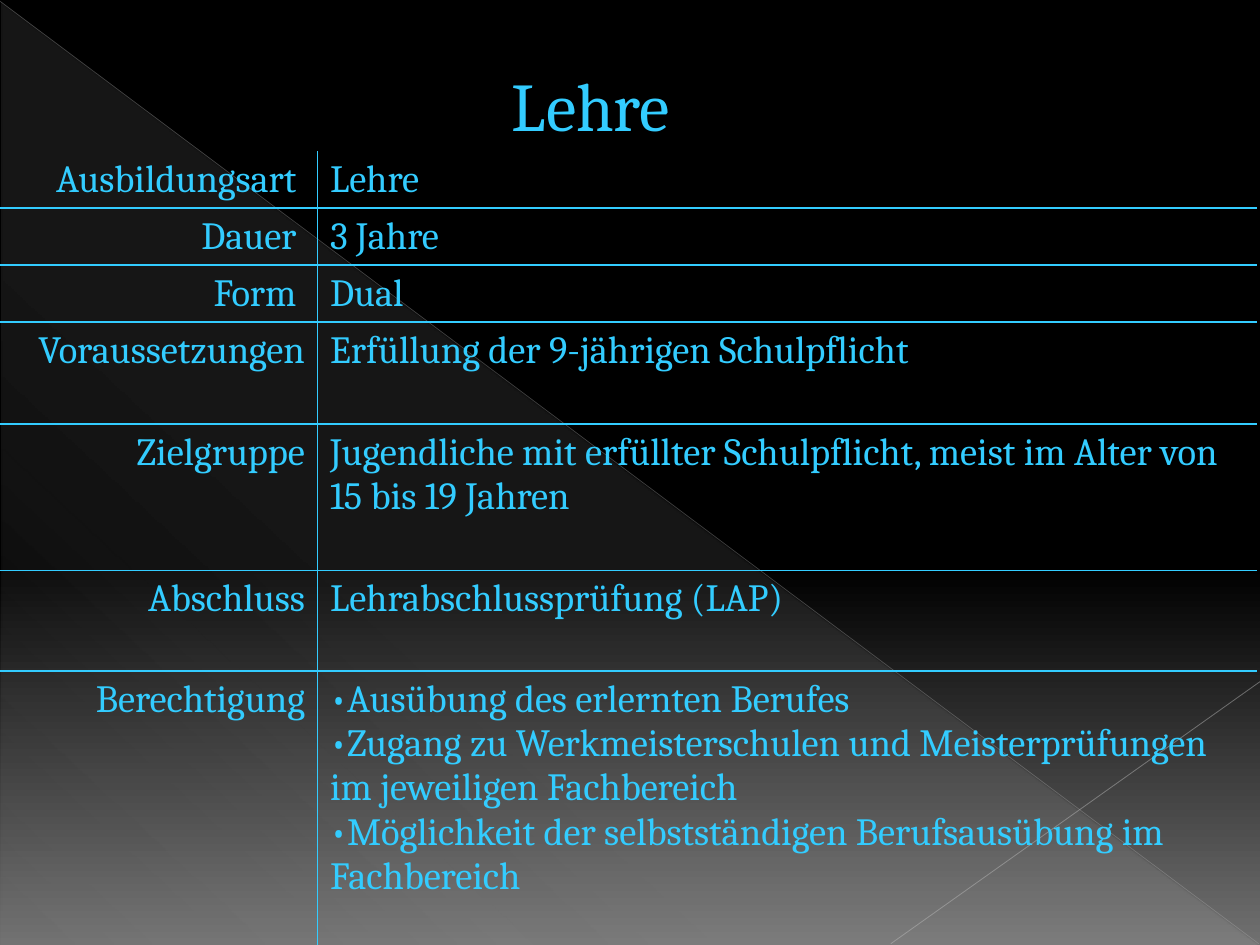
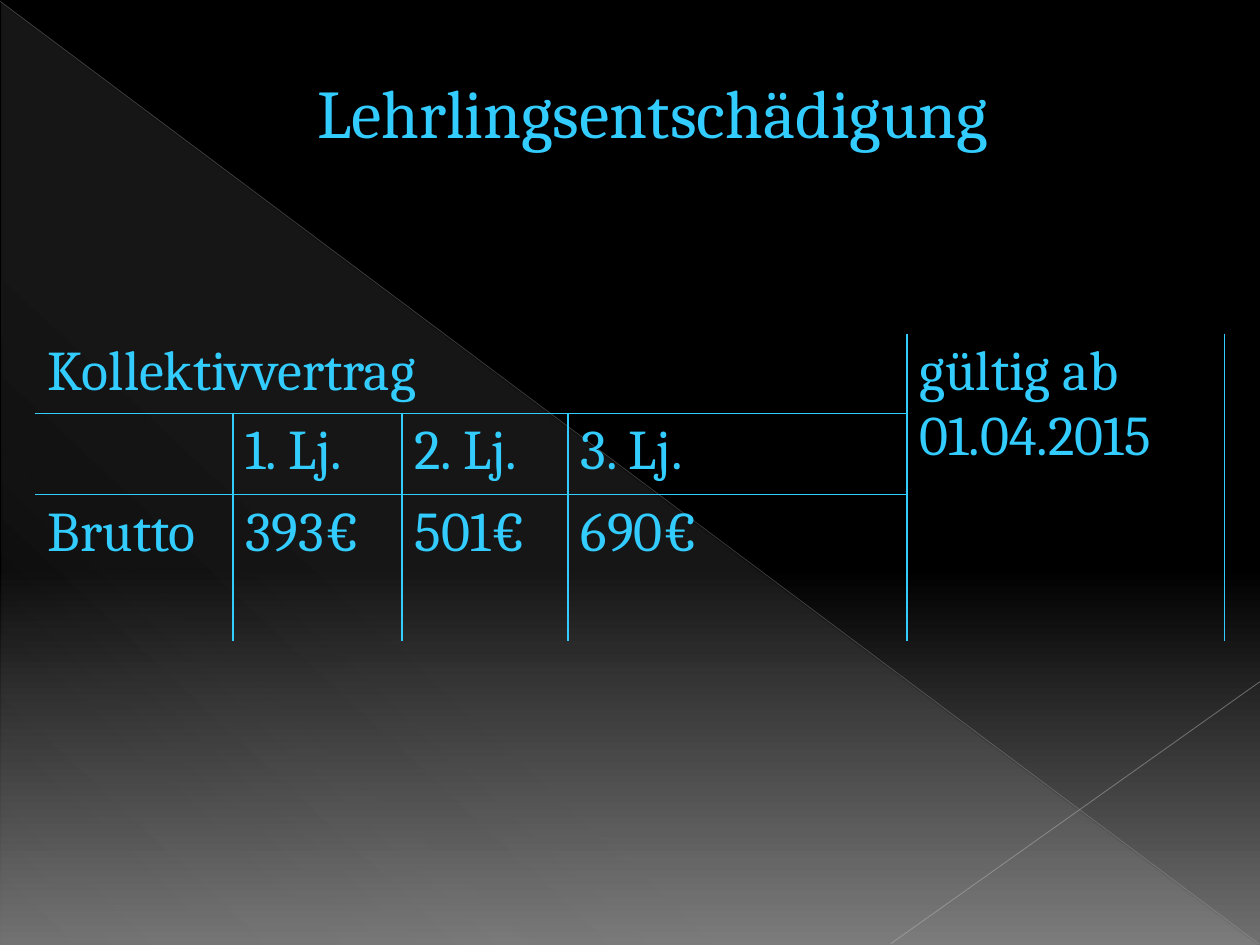
import pptx
import pptx.dml.color
import pptx.enum.shapes
import pptx.enum.text
import pptx.oxml
import pptx.oxml.ns
import pptx.util
from pptx.util import Inches

# Content
CYAN, FONT = "33CCFF", "Cambria"
PAGES = [
    {
        "title": "Lehre", "box": (2.17, 0.45, 5.04, 0.76),
        "at": (0, 1.2), "size": 22, "right": [0], "spans": [],
        "cols": [2.52, 7.46], "rows": [0.45, 0.45, 0.45, 0.81, 1.16, 0.8, 2.45],
        "cells": [
            ["Ausbildungsart ", "Lehre"],
            ["Dauer ", "3 Jahre"],
            ["Form ", "Dual"],
            ["Voraussetzungen", "Erfüllung der 9-jährigen Schulpflicht"],
            ["Zielgruppe", "Jugendliche mit erfüllter Schulpflicht, "
                           "meist im Alter von 15 bis 19 Jahren"],
            ["Abschluss", "Lehrabschlussprüfung (LAP)"],
            ["Berechtigung",
             "•Ausübung des erlernten Berufes\n"
             "•Zugang zu Werkmeisterschulen und Meisterprüfungen "
             "im jeweiligen Fachbereich\n"
             "•Möglichkeit der selbstständigen Berufsausübung im Fachbereich"],
        ],
    },
    {
        "title": "Lehrlingsentschädigung", "box": (1.95, 0.51, 6.46, 0.76),
        "at": (0.28, 2.65), "size": 32, "right": [],
        "spans": [(0, 0, 0, 3), (0, 4, 2, 4)],
        "cols": [1.57, 1.34, 1.32, 2.69, 2.52], "rows": [0.63, 0.63, 1.16],
        "cells": [
            ["Kollektivvertrag", "", "", "", "gültig ab 01.04.2015"],
            ["", "1. Lj.", "2. Lj.", "3. Lj.", ""],
            ["Brutto", "393€", "501€", "690€", ""],
        ],
    },
]
# Gradient stops: place, colour, opacity (all but colour in percent)
NIGHT = [(0, "000000", 100), (60, "000000", 100), (100, "707070", 100)]
SHEEN = [(0, "F8F8F8", 10), (70, "F8F8F8", 8), (100, "F8F8F8", 1)]
# Lines: from, to, colour, width, opacity
RAYS = [
    ((0, 0.01), (9.99, 7.49), "B4B4B4", 0.39, 35),
    ((10, 5.41), (7.07, 7.49), "BDBDBD", 0.47, 45),
]
PLAIN = "{2D5ABB26-0587-4C30-8999-92F81FD0307C}"
NS = pptx.oxml.ns.nsdecls("a")
ALIGN = pptx.enum.text.PP_ALIGN
qn = pptx.oxml.ns.qn


def tint(code):
    return pptx.dml.color.RGBColor.from_string(code)


def write(frame, text, size, align=ALIGN.LEFT, color=CYAN):
    frame.word_wrap = True
    frame.text = text
    for para in frame.paragraphs:
        para.alignment = align
        para.font.size = pptx.util.Pt(size)
        for run in para.runs:
            run.font.size = pptx.util.Pt(size)
            run.font.name = FONT
            run.font.color.rgb = tint(color)


def blend(root, stops, angle):
    """Replace the first solid fill under root by a gradient."""
    marks = "".join(
        f'<a:gs pos="{pos * 1000}"><a:srgbClr val="{code}">'
        f'<a:alpha val="{alpha * 1000}"/></a:srgbClr></a:gs>'
        for pos, code, alpha in stops)
    old = root.find(".//" + qn("a:solidFill"))
    old.getparent().replace(old, pptx.oxml.parse_xml(
        f'<a:gradFill {NS} rotWithShape="1"><a:gsLst>{marks}</a:gsLst>'
        f'<a:lin ang="{angle * 60000}" scaled="0"/></a:gradFill>'))


def add_back(deck, layout, slide):
    """Give the master its backdrop and the layout its triangle and rays."""
    master = deck.slide_master
    master.background.fill.solid()
    master.background.fill.fore_color.rgb = tint("000000")
    blend(master.element, NIGHT, 90)

    kinds = pptx.enum.shapes
    wedge = slide.shapes.add_shape(
        kinds.MSO_SHAPE.RIGHT_TRIANGLE,
        *map(Inches, (0.01, 0.02, 9.98, 7.48)))
    wedge.shadow.inherit = False
    wedge.line.fill.background()
    wedge.fill.solid()
    wedge.fill.fore_color.rgb = tint("F8F8F8")
    blend(wedge.element.spPr, SHEEN, 133)
    parts = [wedge]

    for start, end, code, width, alpha in RAYS:
        ray = slide.shapes.add_connector(
            kinds.MSO_CONNECTOR.STRAIGHT, *map(Inches, start + end))
        ray.line.color.rgb = tint(code)
        ray.line.width = pptx.util.Pt(width)
        props = ray.element.spPr
        props.find(".//" + qn("a:srgbClr")).append(
            pptx.oxml.parse_xml(f'<a:alpha {NS} val="{alpha * 1000}"/>'))
        props.append(pptx.oxml.parse_xml(f"<a:effectLst {NS}/>"))
        parts.append(ray)

    # Shared parts live on the layout, behind its placeholders
    for spot, part in enumerate(parts, 2):
        layout.shapes.element.insert(spot, part.element)


def rule(table, page):
    """Draw the inner lines, leaving merged areas whole."""
    rows, cols = len(page["rows"]), len(page["cols"])
    owner = {(r, c): (r, c) for r in range(rows) for c in range(cols)}
    for top, left, low, right in page["spans"]:
        for r in range(top, low + 1):
            for c in range(left, right + 1):
                owner[r, c] = (top, left)
    edges = {spot: set() for spot in owner}

    def join(one, two, sides):
        if owner.get(two) not in (None, owner[one]):
            for spot, side in zip((one, two), sides):
                edges[owner[spot]].add(side)

    for r, c in owner:
        join((r, c), (r, c + 1), "RL")
        join((r, c), (r + 1, c), "BT")

    for spot, sides in edges.items():
        props = table.cell(*spot)._tc.get_or_add_tcPr()
        for place, side in enumerate(sorted(sides, key="LRTB".index)):
            props.insert(place, pptx.oxml.parse_xml(
                f'<a:ln{side} {NS} w="12700"><a:solidFill>'
                f'<a:srgbClr val="{CYAN}"/></a:solidFill></a:ln{side}>'))


def add_grid(slide, page):
    cols, rows = page["cols"], page["rows"]
    frame = slide.shapes.add_table(
        len(rows), len(cols),
        *map(Inches, page["at"] + (sum(cols), sum(rows))))
    frame.element.find(".//" + qn("a:tableStyleId")).text = PLAIN
    table = frame.table
    table.first_row = table.horz_banding = False
    for col, width in zip(table.columns, cols):
        col.width = Inches(width)
    for row, height in zip(table.rows, rows):
        row.height = Inches(height)
    for r, line in enumerate(page["cells"]):
        for c, text in enumerate(line):
            cell = table.cell(r, c)
            cell.fill.background()
            align = ALIGN.RIGHT if c in page["right"] else ALIGN.LEFT
            write(cell.text_frame, text, page["size"], align)
    for top, left, low, right in page["spans"]:
        table.cell(top, left).merge(table.cell(low, right))
    rule(table, page)


def add_title(slide, page):
    title = slide.shapes.title
    title.left, title.top, title.width, title.height = map(Inches, page["box"])
    frame = title.text_frame
    write(frame, page["title"], 39, ALIGN.CENTER)
    frame.auto_size = pptx.enum.text.MSO_AUTO_SIZE.NONE
    frame.vertical_anchor = pptx.enum.text.MSO_ANCHOR.TOP


def main():
    deck = pptx.Presentation()
    deck.slide_width, deck.slide_height = Inches(10), Inches(7.5)
    layout = deck.slide_layouts[5]
    for count, page in enumerate(PAGES):
        slide = deck.slides.add_slide(layout)
        if count == 0:
            add_back(deck, layout, slide)
        add_title(slide, page)
        add_grid(slide, page)
    deck.save("out.pptx")


if __name__ == "__main__":
    main()
